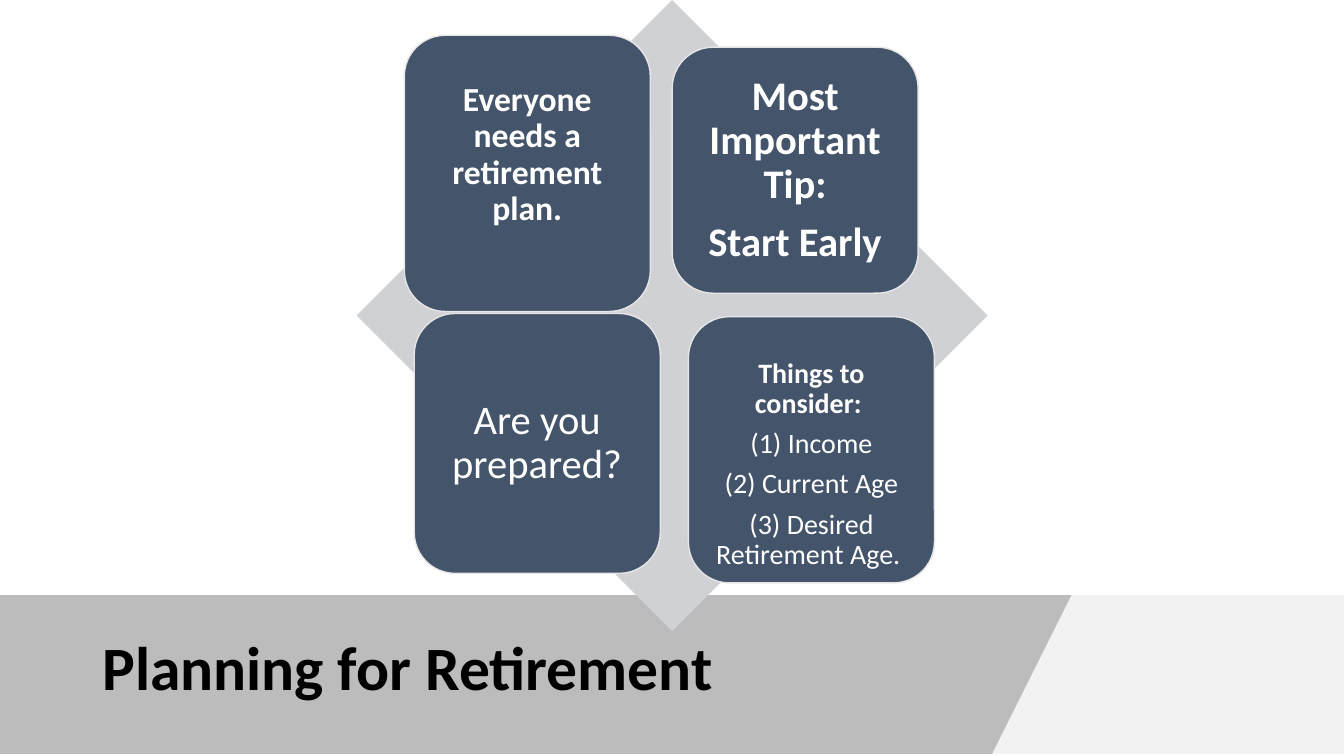
from lxml.etree import SubElement
from pptx import Presentation
from pptx.dml.color import RGBColor
from pptx.enum.shapes import MSO_SHAPE
from pptx.enum.text import MSO_ANCHOR, PP_ALIGN
from pptx.oxml.ns import qn
from pptx.util import Cm, Pt

W, H = 33.87, 19.05
BAND_TOP = 14.91

prs = Presentation()
prs.slide_width, prs.slide_height = Cm(W), Cm(H)
s = prs.slides.add_slide(prs.slide_layouts[6])


def paint(sp, fill, line=None):
    sp.shadow.inherit = False
    sp.fill.solid()
    sp.fill.fore_color.rgb = RGBColor.from_string(fill)
    if line:
        sp.line.color.rgb = RGBColor.from_string(line)
        sp.line.width = Pt(1)
    else:
        sp.line.fill.background()


def style(p, size, color, bold):
    p.line_spacing = 0.9
    p.font.name = "Calibri"
    p.font.size = Pt(size)
    p.font.bold = bold
    p.font.color.rgb = RGBColor.from_string(color)


# Slanted bands along the bottom
bands = [
    ("F2F2F2", [(26.95, BAND_TOP), (W, BAND_TOP), (W, H), (25.04, H)]),
    ("595959", [(0, BAND_TOP), (26.57, BAND_TOP), (24.66, H), (0, H)]),
]
for color, points in bands:
    fb = s.shapes.build_freeform(*points[0], scale=Cm(1))
    fb.add_line_segments(points[1:], close=True)
    band = fb.convert_to_shape()
    paint(band, color)

# The left band, drawn last, is 40 % opaque
rgb = band.fill._xPr.find(qn("a:solidFill")).find(qn("a:srgbClr"))
SubElement(rgb, qn("a:alpha"), val="40000")

# Title
tb = s.shapes.add_textbox(Cm(2.33), Cm(15.36), Cm(22.43), Cm(3.05))
tf = tb.text_frame
tf.word_wrap = True
tf.vertical_anchor = MSO_ANCHOR.MIDDLE
p = tf.paragraphs[0]
p.text = "Planning for Retirement"
style(p, 44, "000000", True)

# Diamond behind the cards
diamond = s.shapes.add_shape(MSO_SHAPE.DIAMOND, Cm(8.99), 0, Cm(15.9), Cm(15.9))
paint(diamond, "CFD1D4")

# Cards: left, top, height, side/top/bottom margins, size, (text, bold) paragraphs
cards = [
    (10.19, 0.89, 6.96, (0.25, 0.25, 1.17), 24,
     [("Everyone needs a retirement plan.", True)]),
    (17.35, 7.98, 6.71, (0.15, 0.91, 0.15), 20,
     [("Things to consider: ", True), ("(1) Income", False),
      ("(2) Current Age", False), ("(3) Desired Retirement Age. ", False)]),
    (16.94, 1.19, 6.2, (0.3, 0.3, 0.3), 29,
     [("Most Important Tip:", True), ("Start Early", True)]),
    (10.44, 7.9, 6.55, (0.3, 0.3, 0.3), 29,
     [("Are you prepared?", False)]),
]
for left, top, height, (side, above, below), size, paragraphs in cards:
    card = s.shapes.add_shape(MSO_SHAPE.ROUNDED_RECTANGLE,
                              Cm(left), Cm(top), Cm(6.2), Cm(height))
    paint(card, "44546A", "E7E6E6")
    tf = card.text_frame
    tf.word_wrap = True
    tf.vertical_anchor = MSO_ANCHOR.MIDDLE
    tf.margin_left = tf.margin_right = Cm(side)
    tf.margin_top, tf.margin_bottom = Cm(above), Cm(below)
    for i, (text, bold) in enumerate(paragraphs):
        p = tf.add_paragraph() if i else tf.paragraphs[0]
        p.text = text
        p.alignment = PP_ALIGN.CENTER
        p.space_after = Pt(0.35 * size)
        style(p, size, "FFFFFF", bold)

prs.save("out.pptx")
